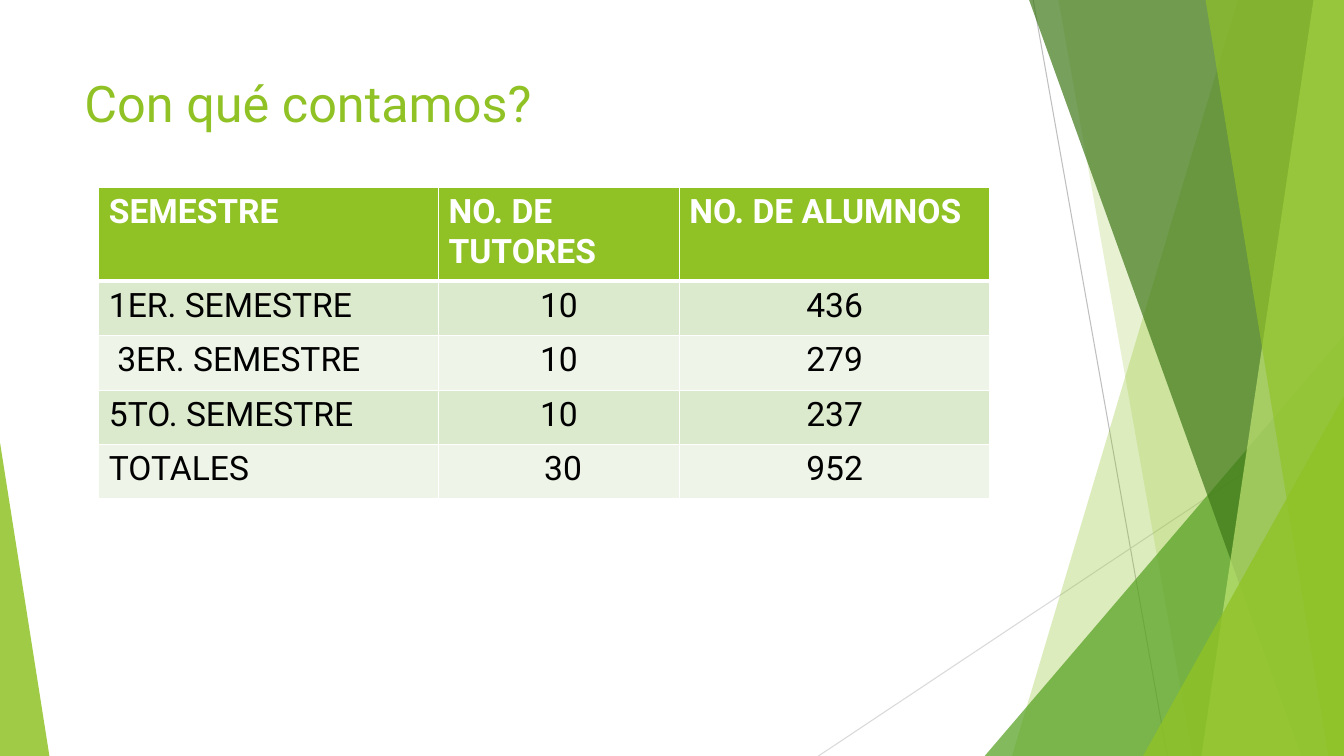
from dataclasses import dataclass

from lxml.etree import SubElement
from pptx import Presentation
from pptx.dml.color import RGBColor
from pptx.enum.shapes import MSO_CONNECTOR, MSO_SHAPE
from pptx.enum.text import PP_ALIGN
from pptx.oxml.ns import qn
from pptx.util import Pt

WIDTH, HEIGHT = 960, 540
FONT = "Roboto"
GREEN, WHITE, BLACK = "90C226", "FFFFFF", "000000"
BAND_COLORS = ("DBE9CD", "EEF4E8")


@dataclass
class Ray:
    start: tuple[float, float]
    end: tuple[float, float]
    color: str


@dataclass
class Band:
    """A full-height facet from a slanted left edge to the right slide edge."""
    top_x: float
    bottom_x: float
    color: str
    opacity: int


@dataclass
class Corner:
    """A right triangle standing on the bottom slide edge."""
    left: float
    top: float
    width: float
    apex: float
    color: str
    opacity: int


RAYS = [
    Ray((738, 0), (833.8, HEIGHT), "BFBFBF"),
    Ray((WIDTH, 290.2), (584.6, HEIGHT), "D9D9D9"),
]
FACETS = [
    Band(884.2, 722.9, GREEN, 30),
    Band(756, 851.8, GREEN, 20),
    Corner(703.4, 239.8, 256.6, 1, "54A021", 72),
    Band(735.1, 929.5, "3F7819", 70),
    Band(938.2, 858.2, "C0E474", 70),
    Band(861.1, 949, GREEN, 65),
    Corner(816.5, 283, 143.5, 1, GREEN, 80),
    Corner(0, 316.1, 35.3, 0, GREEN, 85),
]
COLUMN_WIDTHS = (242.6, 172.1, 221.8)
HEADER_HEIGHT, ROW_HEIGHT = 67, 38.9
ROWS = [
    ("SEMESTRE", "NO. DE TUTORES", "NO. DE ALUMNOS"),
    ("1ER. SEMESTRE", "10", "436"),
    (" 3ER. SEMESTRE", "10", "279"),
    ("5TO. SEMESTRE", "10", "237"),
    ("TOTALES", " 30", "952"),
]


def rgb(color: str) -> RGBColor:
    return RGBColor.from_string(color)


def add_run(paragraph, text: str, size: float, color: str, bold: bool = False) -> None:
    run = paragraph.add_run()
    run.text = text
    run.font.name = FONT
    run.font.size = Pt(size)
    run.font.bold = bold
    run.font.color.rgb = rgb(color)


def add_ray(slide, ray: Ray) -> None:
    points = [Pt(value) for value in (*ray.start, *ray.end)]
    connector = slide.shapes.add_connector(MSO_CONNECTOR.STRAIGHT, *points)
    connector.line.color.rgb = rgb(ray.color)
    connector.line.width = Pt(0.75)
    SubElement(connector._element.spPr, qn("a:effectLst"))


def add_facet(slide, facet: Band | Corner) -> None:
    if isinstance(facet, Band):
        builder = slide.shapes.build_freeform(Pt(facet.top_x), 0)
        corners = [(WIDTH, 0), (WIDTH, HEIGHT), (facet.bottom_x, HEIGHT)]
        builder.add_line_segments([(Pt(x), Pt(y)) for x, y in corners], close=True)
        shape = builder.convert_to_shape()
    else:
        shape = slide.shapes.add_shape(
            MSO_SHAPE.ISOSCELES_TRIANGLE, Pt(facet.left), Pt(facet.top),
            Pt(facet.width), Pt(HEIGHT - facet.top))
        shape.adjustments[0] = facet.apex
    shape.shadow.inherit = False
    shape.line.fill.background()
    shape.fill.solid()
    shape.fill.fore_color.rgb = rgb(facet.color)
    color_element = shape._element.spPr.find(qn("a:solidFill"))[0]
    SubElement(color_element, qn("a:alpha"), val=str(facet.opacity * 1000))


def add_title(slide, text: str) -> None:
    frame = slide.shapes.add_textbox(Pt(53.3), Pt(48.2), Pt(335.5), Pt(64.8)).text_frame
    frame.word_wrap = True
    add_run(frame.paragraphs[0], text, 36, GREEN)


def set_cell_borders(cell, bottom_width: float, top_width: float) -> None:
    properties = cell._tc.get_or_add_tcPr()
    widths = {"a:lnL": 1, "a:lnR": 1, "a:lnT": top_width, "a:lnB": bottom_width}
    for position, (tag, width) in enumerate(widths.items()):
        line = SubElement(properties, qn(tag), w=str(Pt(width)))
        fill = SubElement(line, qn("a:solidFill"))
        SubElement(fill, qn("a:srgbClr"), val=WHITE)
        properties.insert(position, line)


def add_semester_table(slide) -> None:
    table = slide.shapes.add_table(
        len(ROWS), len(COLUMN_WIDTHS), Pt(70.6), Pt(133.9), Pt(sum(COLUMN_WIDTHS)),
        Pt(HEADER_HEIGHT + ROW_HEIGHT * (len(ROWS) - 1))).table
    for column, width in zip(table.columns, COLUMN_WIDTHS):
        column.width = Pt(width)
    for row_index, texts in enumerate(ROWS):
        header = row_index == 0
        table.rows[row_index].height = Pt(HEADER_HEIGHT if header else ROW_HEIGHT)
        for column_index, text in enumerate(texts):
            cell = table.cell(row_index, column_index)
            cell.fill.solid()
            cell.fill.fore_color.rgb = rgb(GREEN if header else BAND_COLORS[(row_index - 1) % 2])
            set_cell_borders(cell, 3 if header else 1, 3 if row_index == 1 else 1)
            paragraph = cell.text_frame.paragraphs[0]
            if not header and column_index > 0:
                paragraph.alignment = PP_ALIGN.CENTER
            add_run(paragraph, text, 24, WHITE if header else BLACK, header)


def main() -> None:
    presentation = Presentation()
    presentation.slide_width, presentation.slide_height = Pt(WIDTH), Pt(HEIGHT)
    slide = presentation.slides.add_slide(presentation.slide_layouts[6])
    for ray in RAYS:
        add_ray(slide, ray)
    for facet in FACETS:
        add_facet(slide, facet)
    add_title(slide, "Con qué contamos?")
    add_semester_table(slide)
    presentation.save("out.pptx")


if __name__ == "__main__":
    main()
